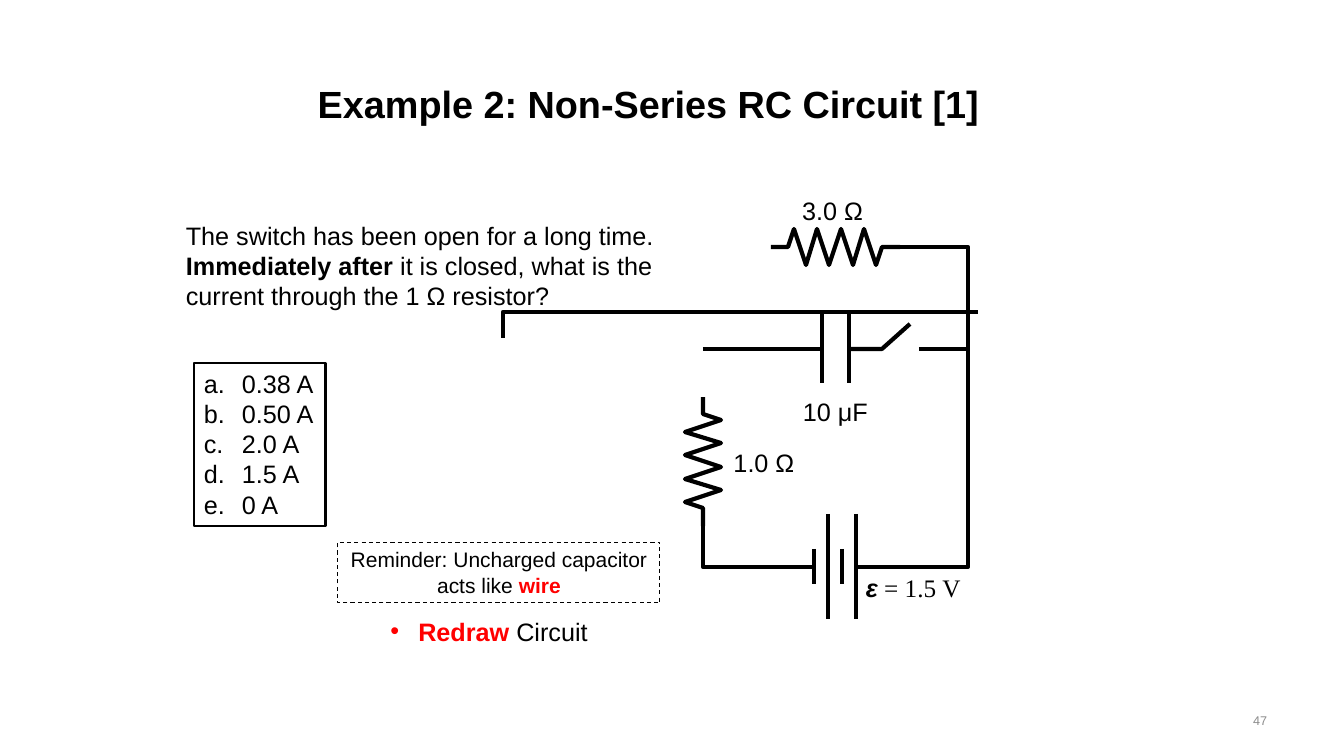
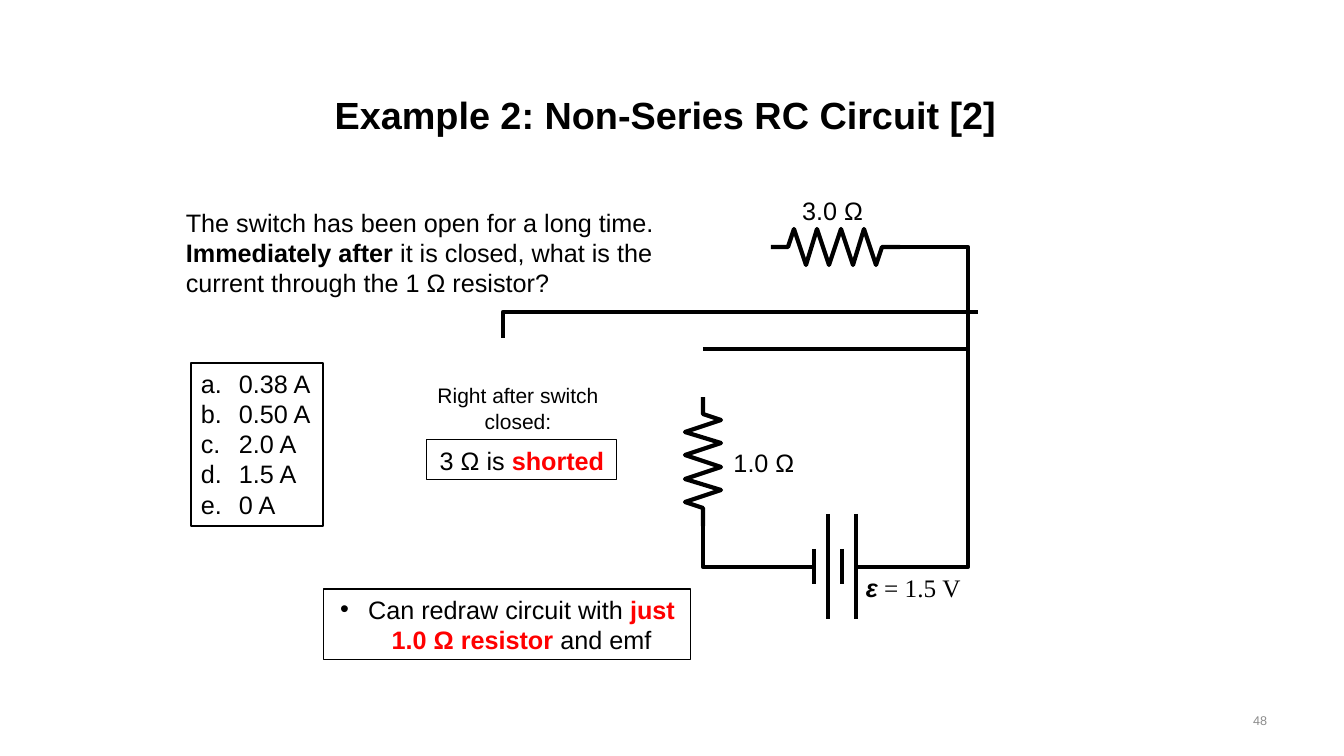
from pptx import Presentation
from pptx.dml.color import RGBColor
from pptx.enum.dml import MSO_LINE
from pptx.enum.shapes import MSO_CONNECTOR, MSO_SHAPE
from pptx.enum.text import MSO_ANCHOR, PP_ALIGN
from pptx.oxml.ns import qn
from pptx.util import Pt
from lxml import etree

PX = 914400 / 100.8
STRAIGHT = MSO_CONNECTOR.STRAIGHT
RECT = MSO_SHAPE.RECTANGLE
DASH = MSO_LINE.DASH
LEFT, CENTER, RIGHT = PP_ALIGN.LEFT, PP_ALIGN.CENTER, PP_ALIGN.RIGHT
TOP, MIDDLE = MSO_ANCHOR.TOP, MSO_ANCHOR.MIDDLE

COLORS = {"ink": "000000", "key": "FF0000", "page": "8C8C8C", "paper": "FFFFFF"}
BASE = {"name": "Arial", "size": 18, "bold": False, "italic": False, "color": "ink"}
BOLD = {"bold": True}
KEY = {"bold": True, "color": "key"}
SMALL = {"size": 15}
WIRE = 3

# Bullet kinds: element, its attributes, hanging indent in px
DOT = ("a:buChar", {"char": "•"}, 28)
LETTERS = ("a:buAutoNum", {"type": "alphaLcPeriod"}, 38)


def px(n):
    return round(n * PX)


def rgb(name):
    return RGBColor.from_string(COLORS[name])


# Text
def add_run(p, text, fmt):
    r = p.add_run()
    r.text = text
    for key, value in {**BASE, **fmt}.items():
        if key == "color":
            r.font.color.rgb = rgb(value)
        else:
            setattr(r.font, key, Pt(value) if key == "size" else value)


def set_bullet(p, bullet):
    tag, attrs, indent = bullet
    pPr = p._p.get_or_add_pPr()
    pPr.set("marL", str(px(indent)))
    pPr.set("indent", str(-px(indent)))
    font = etree.SubElement(pPr, qn("a:buFont"))
    font.set("typeface", BASE["name"])
    etree.SubElement(pPr, qn(tag), attrs)


def write(sp, paragraphs, align=CENTER, anchor=TOP, bullet=None, wrap=True):
    tf = sp.text_frame
    tf.word_wrap = wrap
    tf.vertical_anchor = anchor
    for i, runs in enumerate(paragraphs):
        p = tf.add_paragraph() if i else tf.paragraphs[0]
        p.alignment = align
        if bullet:
            set_bullet(p, bullet)
        for text, fmt in runs:
            add_run(p, text, fmt)


def add_text(s, box, paragraphs, **layout):
    sp = s.shapes.add_textbox(*map(px, box))
    write(sp, paragraphs, **layout)


def add_box(s, box, paragraphs, width=0.75, dash=None, fill=None, **layout):
    sp = s.shapes.add_shape(RECT, *map(px, box))
    sp.shadow.inherit = False
    if fill:
        sp.fill.solid()
        sp.fill.fore_color.rgb = rgb(fill)
    else:
        sp.fill.background()
    set_line(sp, width)
    if dash:
        sp.line.dash_style = dash
    write(sp, paragraphs, **layout)


# Lines
def set_line(sp, width):
    sp.line.color.rgb = rgb("ink")
    sp.line.width = Pt(width)


def add_wire(s, origin, *points):
    """Straight connector for two points, bent outline for more."""
    pts = [(px(origin[0] + x), px(origin[1] + y)) for x, y in points]
    if len(pts) == 2:
        sp = s.shapes.add_connector(STRAIGHT, *pts[0], *pts[1])
        etree.SubElement(sp._element.spPr, qn("a:effectLst"))
    else:
        fb = s.shapes.build_freeform(*pts[0], scale=1.0)
        fb.add_line_segments(pts[1:], close=False)
        sp = fb.convert_to_shape()
        sp.shadow.inherit = False
        sp.fill.background()
    set_line(sp, WIRE)


def add_resistor(s, origin, x, y, vertical=False):
    peaks = [(round(23 + 11.7 * i), 18 if i % 2 else -18) for i in range(8)]
    trace = [(0, 0), (17, 0), *peaks, (111, 0), (129, 0)]
    if vertical:
        trace = [(-across, along) for along, across in trace]
    add_wire(s, origin, *[(x + dx, y + dy) for dx, dy in trace])


def add_plates(s, origin, plates):
    for x, top, bottom in plates:
        add_wire(s, origin, (x, top), (x, bottom))


# Circuit
def add_circuit(s, origin, switch_open):
    ox, oy = origin

    def label(x, y, w, *runs, align=CENTER):
        add_text(s, (ox + x, oy + y, w, 40), [runs], align=align, wrap=False)

    # Outer loop
    add_wire(s, origin, (392, 57), (468, 57), (468, 377), (356, 377))
    add_wire(s, origin, (314, 377), (203, 377), (203, 330))
    add_wire(s, origin, (3, 148), (3, 122), (478, 122))

    # Resistors
    add_resistor(s, origin, 271, 57)
    label(279, 0, 107, ("3.0 Ω", {}))
    add_resistor(s, origin, 203, 207, vertical=True)
    label(223, 252, 82, ("1.0 Ω", {}))

    # Battery: short and long plates in turn
    add_plates(s, origin, [(314 + 14 * i, *((324, 429) if i % 2 else (359, 394)))
                           for i in range(4)])
    label(356, 377, 122, ("ε", {"bold": True, "italic": True}),
          (" = 1.5 V", {"name": "Times New Roman"}), align=LEFT)

    # Middle branch
    if switch_open:
        add_wire(s, origin, (203, 159), (322, 159))
        add_plates(s, origin, [(322, 124, 193), (349, 124, 193)])
        add_wire(s, origin, (349, 159), (382, 159), (410, 134))
        add_wire(s, origin, (419, 159), (468, 159))
        label(282, 201, 107, ("10 μF", {}))
    else:
        add_wire(s, origin, (203, 159), (468, 159))


# Parts shared by both slides
def add_example(prs, number, title_box, question_top, choices_left, page):
    s = prs.slides.add_slide(prs.slide_layouts[6])
    title = f"Example 2: Non-Series RC Circuit [{number}]"
    add_text(s, title_box, [[(title, {"size": 27, "bold": True})]], anchor=MIDDLE)
    add_circuit(s, (500, 190), switch_open=number == 1)
    add_text(s, (176, question_top, 526, 102), [[
        ("The switch has been open for a long time. ", {}),
        ("Immediately after ", BOLD),
        ("it is closed, what is the current through the 1 Ω resistor?", {}),
    ]], align=LEFT)
    choices = ["0.38 A", "0.50 A", "2.0 A", "1.5 A", "0 A"]
    add_box(s, (choices_left, 363, 132, 163), [[(c, {})] for c in choices],
            width=2, fill="paper", align=LEFT, bullet=LETTERS)
    add_text(s, (964, 701, 313, 40), [[(page, {"size": 9, "color": "page"})]],
             align=RIGHT, anchor=MIDDLE)
    return s


def add_question_slide(prs):
    s = add_example(prs, 1, (285, 56, 727, 95), 215, 194, "47")
    add_box(s, (338, 542, 322, 61), [[
        ("Reminder: Uncharged capacitor acts like ", SMALL),
        ("wire", {**SMALL, **KEY}),
    ]], dash=DASH)
    add_text(s, (360, 611, 258, 40), [[("Redraw", KEY), (" Circuit", {})]],
             bullet=DOT)


def add_redrawn_slide(prs):
    s = add_example(prs, 2, (319, 67, 693, 95), 202, 191, "48")
    add_text(s, (414, 378, 208, 61), [[("Right after switch closed:", SMALL)]])
    add_box(s, (427, 440, 190, 40), [[("3 Ω is ", {}), ("shorted", KEY)]])
    add_box(s, (324, 589, 367, 71), [[
        ("Can redraw circuit with ", {}),
        ("just 1.0 Ω resistor", KEY),
        (" and emf", {}),
    ]], bullet=DOT)


def main():
    prs = Presentation()
    prs.slide_width, prs.slide_height = px(1344), px(756)
    add_question_slide(prs)
    add_redrawn_slide(prs)
    prs.save("out.pptx")


if __name__ == "__main__":
    main()
